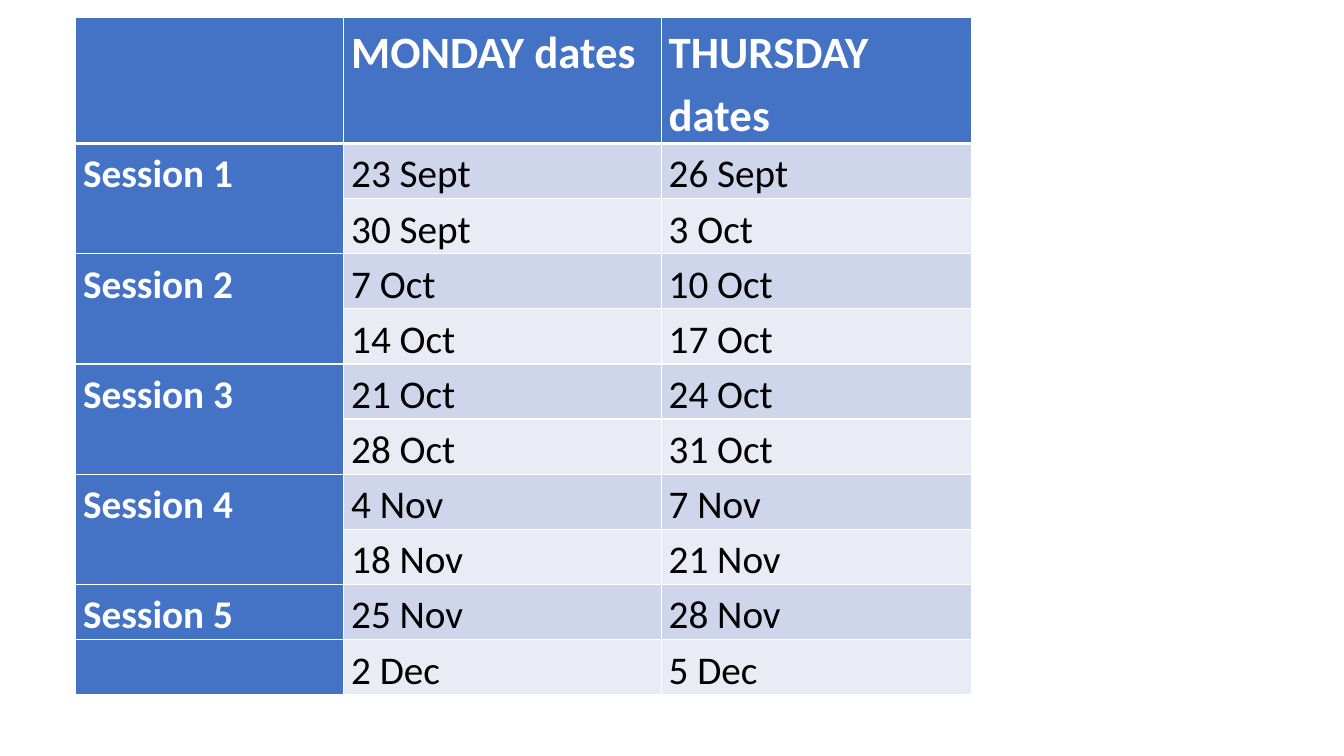
import pptx
import pptx.util
import pptx.dml.color
import pptx.oxml
import pptx.oxml.ns

Pt = pptx.util.Pt
RGBColor = pptx.dml.color.RGBColor

WHITE = RGBColor(0xFF, 0xFF, 0xFF)
BLACK = RGBColor(0x00, 0x00, 0x00)
BLUE = RGBColor(0x44, 0x72, 0xC4)
BAND_DARK = RGBColor(0xCF, 0xD5, 0xEA)
BAND_LIGHT = RGBColor(0xE9, 0xEB, 0xF5)

HEADINGS = ("", "MONDAY dates", "THURSDAY dates")
DATES = (
    ("23 Sept", "26 Sept"),
    ("30 Sept", "3 Oct"),
    ("7 Oct", "10 Oct"),
    ("14 Oct", "17 Oct"),
    ("21 Oct", "24 Oct"),
    ("28 Oct", "31 Oct"),
    ("4 Nov", "7 Nov"),
    ("18 Nov", "21 Nov"),
    ("25 Nov", "28 Nov"),
    ("2 Dec", "5 Dec"),
)
COLUMN_WIDTHS = (191.5, 226.8, 221.8)
HEADER_HEIGHT = 59
ROW_HEIGHT = 38.9
MERGED_SESSIONS = 4


def set_borders(cell, widths):
    """Draw white cell borders; widths maps each edge to points."""
    properties = cell._tc.get_or_add_tcPr()
    for position, (edge, width) in enumerate(widths.items()):
        line = pptx.oxml.parse_xml(
            f'<a:{edge} {pptx.oxml.ns.nsdecls("a")} w="{Pt(width)}">'
            f'<a:solidFill><a:srgbClr val="{WHITE}"/></a:solidFill></a:{edge}>'
        )
        properties.insert(position, line)


# Slide
presentation = pptx.Presentation()
presentation.slide_width = Pt(960)
presentation.slide_height = Pt(540)
slide = presentation.slides.add_slide(presentation.slide_layouts[6])

# Wording of the table: each session covers two rows of dates
rows = [HEADINGS]
for index, dates in enumerate(DATES):
    session = f"Session {index // 2 + 1}" if index % 2 == 0 else ""
    rows.append((session, *dates))

# Table frame
table_height = HEADER_HEIGHT + ROW_HEIGHT * len(DATES)
table = slide.shapes.add_table(
    len(rows), len(HEADINGS), Pt(54), Pt(12.5),
    Pt(sum(COLUMN_WIDTHS)), Pt(table_height),
).table
for column, width in zip(table.columns, COLUMN_WIDTHS):
    column.width = Pt(width)
for row_index, row in enumerate(table.rows):
    row.height = Pt(HEADER_HEIGHT if row_index == 0 else ROW_HEIGHT)

# Cells
for row_index, texts in enumerate(rows):
    for column_index, text in enumerate(texts):
        cell = table.cell(row_index, column_index)
        is_header = row_index == 0
        is_heading = is_header or column_index == 0
        band = BAND_DARK if row_index % 2 else BAND_LIGHT
        cell.fill.solid()
        cell.fill.fore_color.rgb = BLUE if is_heading else band
        set_borders(cell, {
            "lnL": 1,
            "lnR": 1,
            "lnT": 3 if row_index == 1 else 1,
            "lnB": 3 if is_header else 1,
        })
        if not text:
            continue

        cell_format = {
            "margin_left": Pt(5.4), "margin_right": Pt(5.4),
            "margin_top": 0, "margin_bottom": 0,
        }
        for name, value in cell_format.items():
            setattr(cell, name, value)
        paragraph = cell.text_frame.paragraphs[0]
        paragraph.line_spacing = 1.15
        paragraph.space_after = Pt(3)
        run = paragraph.add_run()
        run.text = text
        font_format = {
            "name": "Calibri",
            "size": Pt(32 if is_header else 28),
            "bold": is_heading,
        }
        for name, value in font_format.items():
            setattr(run.font, name, value)
        run.font.color.rgb = WHITE if is_heading else BLACK

# Session cells spanning two rows
for session_index in range(MERGED_SESSIONS):
    first_row = 1 + 2 * session_index
    table.cell(first_row, 0).merge(table.cell(first_row + 1, 0))

presentation.save("out.pptx")
